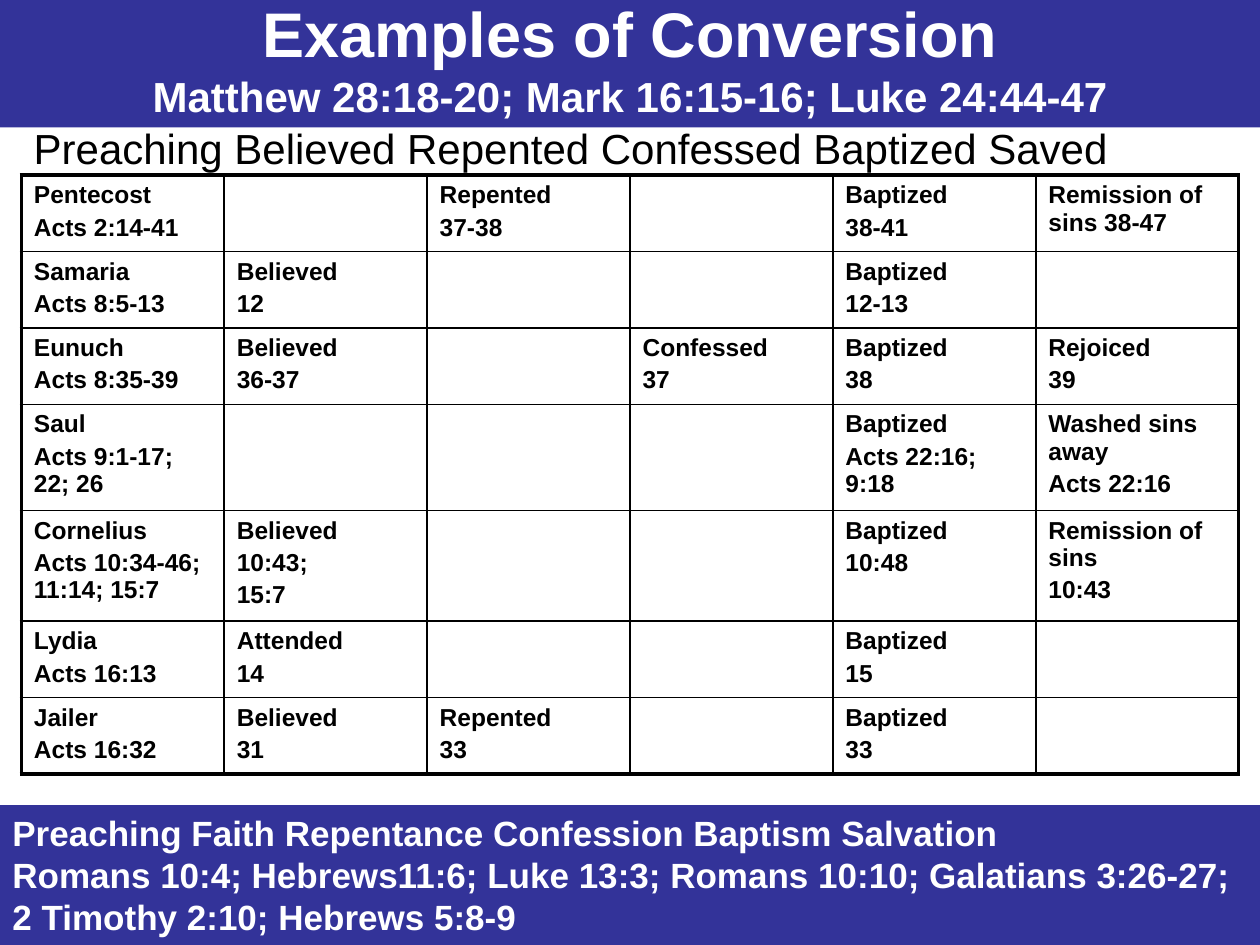
from dataclasses import dataclass

from lxml.etree import SubElement
from pptx import Presentation
from pptx.dml.color import RGBColor
from pptx.enum.shapes import MSO_SHAPE
from pptx.enum.text import MSO_ANCHOR, MSO_AUTO_SIZE, PP_ALIGN
from pptx.oxml.ns import qn
from pptx.util import Cm, Pt


@dataclass
class Theme:
    font: str = "Arial"
    band: RGBColor = RGBColor(0x33, 0x33, 0x99)
    light: RGBColor = RGBColor(0xFF, 0xFF, 0xFF)
    dark: RGBColor = RGBColor(0, 0, 0)
    title: Pt = Pt(36)
    subtitle: Pt = Pt(24)
    headings: Pt = Pt(24)
    footer: Pt = Pt(20)
    cell: Pt = Pt(14)
    cell_gap: Pt = Pt(2.8)
    inner_line: Pt = Pt(1)
    outer_line: Pt = Pt(2.25)


theme = Theme()


def set_font(font, size, color, bold=True):
    for name, value in {"name": theme.font, "size": size, "bold": bold}.items():
        setattr(font, name, value)
    font.color.rgb = color


def add_border(cell, side, width):
    """Draw one side (L, R, T or B) of a table cell."""
    line = SubElement(cell._tc.get_or_add_tcPr(), qn(f"a:ln{side}"), w=str(int(width)))
    fill = SubElement(line, qn("a:solidFill"))
    SubElement(fill, qn("a:srgbClr"), val=str(theme.dark))


prs = Presentation()
prs.slide_width, prs.slide_height = Cm(25.4), Cm(19.05)
slide = prs.slides.add_slide(prs.slide_layouts[5])

# Title band
title = slide.shapes.title
title.left, title.top, title.width, title.height = Cm(0), Cm(-0.25), Cm(25.4), Cm(2.82)
title.fill.solid()
title.fill.fore_color.rgb = theme.band
title_frame = title.text_frame
title_frame.vertical_anchor = MSO_ANCHOR.MIDDLE
title_frame.auto_size = MSO_AUTO_SIZE.SHAPE_TO_FIT_TEXT
title_frame.text = "Examples of Conversion\vMatthew 28:18-20; Mark 16:15-16; Luke 24:44-47"
heading = title_frame.paragraphs[0]
heading.alignment = PP_ALIGN.CENTER
for run, size in zip(heading.runs, (theme.title, theme.subtitle)):
    set_font(run.font, size, theme.light)

# Conversions: each row lists place, believed, repented, confessed, baptized, saved
conversions = [
    ["Pentecost\nActs 2:14-41", "", "Repented\n37-38", "", "Baptized\n38-41",
     "Remission of sins 38-47"],
    ["Samaria\nActs 8:5-13", "Believed\n12", "", "", "Baptized\n12-13", ""],
    ["Eunuch\nActs 8:35-39", "Believed\n36-37", "", "Confessed\n37", "Baptized\n38",
     "Rejoiced\n39"],
    ["Saul\nActs 9:1-17; 22; 26", "", "", "", "Baptized\nActs 22:16; 9:18",
     "Washed sins away\nActs 22:16"],
    ["Cornelius\nActs 10:34-46; 11:14; 15:7", "Believed\n10:43;\n15:7", "", "",
     "Baptized\n10:48", "Remission of sins\n10:43"],
    ["Lydia\nActs 16:13", "Attended\n14", "", "", "Baptized\n15", ""],
    ["Jailer\nActs 16:32", "Believed\n31", "Repented\n33", "", "Baptized\n33", ""],
]
row_heights = [1.54, 1.54, 1.54, 2.14, 2.22, 1.54, 1.54]
last_row, last_col = len(conversions) - 1, len(conversions[0]) - 1

table = slide.shapes.add_table(
    last_row + 1, last_col + 1, Cm(0.43), Cm(3.53), Cm(24.54), Cm(sum(row_heights))
).table
table.first_row = table.horz_banding = False
for column in table.columns:
    column.width = Cm(4.09)

for r, (conversion, height) in enumerate(zip(conversions, row_heights)):
    table.rows[r].height = Cm(height)
    for c, entry in enumerate(conversion):
        cell = table.cell(r, c)
        on_edge = {"L": c == 0, "R": c == last_col, "T": r == 0, "B": r == last_row}
        for side, outer in on_edge.items():
            add_border(cell, side, theme.outer_line if outer else theme.inner_line)
        cell.fill.background()
        cell.text = entry
        for i, paragraph in enumerate(cell.text_frame.paragraphs):
            set_font(paragraph.font, theme.cell, theme.dark)
            if i:
                paragraph.space_before = theme.cell_gap

# Column headings in one line above the table
headings = slide.shapes.add_textbox(Cm(0.43), Cm(2.34), Cm(24.97), Cm(1.27)).text_frame
headings.word_wrap = True
headings.auto_size = MSO_AUTO_SIZE.SHAPE_TO_FIT_TEXT
headings.text = "Preaching Believed Repented Confessed Baptized Saved"
set_font(headings.paragraphs[0].font, theme.headings, theme.dark, bold=False)

# Footer band
footer = slide.shapes.add_shape(MSO_SHAPE.RECTANGLE, Cm(0), Cm(16.23), Cm(25.4), Cm(2.82))
footer.shadow.inherit = False
footer.fill.solid()
footer.fill.fore_color.rgb = theme.band
footer.line.fill.background()
footer_frame = footer.text_frame
footer_frame.word_wrap = True
footer_frame.vertical_anchor = MSO_ANCHOR.TOP
footer_frame.auto_size = MSO_AUTO_SIZE.SHAPE_TO_FIT_TEXT
footer_frame.text = (
    "Preaching Faith Repentance Confession Baptism Salvation\n"
    "Romans 10:4; Hebrews11:6; Luke 13:3; Romans 10:10; Galatians 3:26-27;\v"
    "2 Timothy 2:10; Hebrews 5:8-9"
)
for paragraph in footer_frame.paragraphs:
    paragraph.alignment = PP_ALIGN.LEFT
    set_font(paragraph.font, theme.footer, theme.light)

prs.save("out.pptx")
